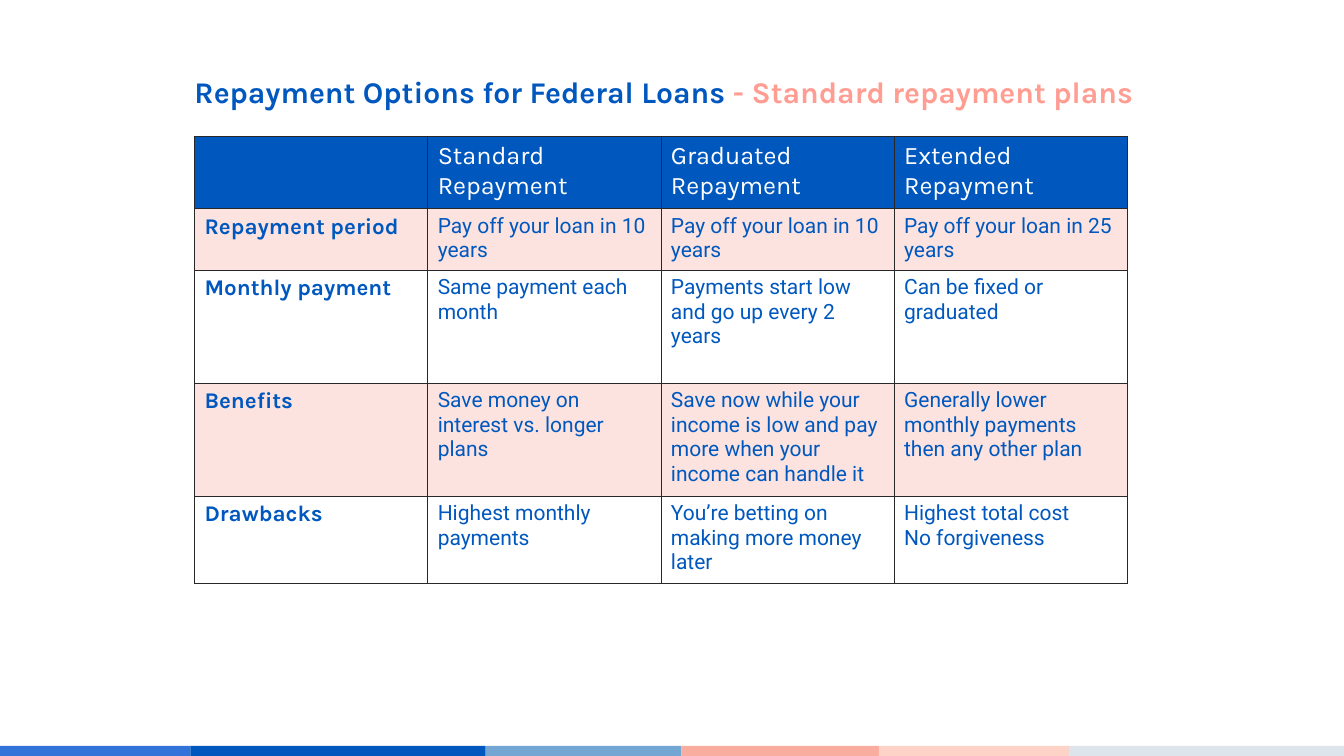
from lxml import etree
from pptx import Presentation
from pptx.dml.color import RGBColor
from pptx.enum.shapes import MSO_SHAPE
from pptx.enum.text import MSO_AUTO_SIZE
from pptx.oxml.ns import qn
from pptx.util import Inches, Pt

RECTANGLE = MSO_SHAPE.RECTANGLE
FIT_SHAPE = MSO_AUTO_SIZE.SHAPE_TO_FIT_TEXT

BLUE = RGBColor(0x00, 0x58, 0xBF)
BRIGHT_BLUE = RGBColor(0x31, 0x73, 0xD9)
SKY = RGBColor(0x74, 0xA6, 0xD3)
CORAL = RGBColor(0xF8, 0xAD, 0x9E)
PEACH = RGBColor(0xFD, 0xD3, 0xC7)
MIST = RGBColor(0xDD, 0xE4, 0xEC)
SALMON = RGBColor(0xFF, 0x9D, 0x93)
BLUSH = RGBColor(0xFC, 0xE3, 0xDF)
WHITE = RGBColor(0xFF, 0xFF, 0xFF)
BORDER = RGBColor(0x28, 0x28, 0x28)


def add_run(paragraph, text, size, font_name, color, bold=False):
    run = paragraph.add_run()
    run.text = text
    run.font.size = Pt(size)
    run.font.name = font_name
    run.font.color.rgb = color
    run.font.bold = bold


def add_borders(cell):
    properties = cell._tc.get_or_add_tcPr()
    for side in ("a:lnL", "a:lnR", "a:lnT", "a:lnB"):
        line = etree.SubElement(properties, qn(side), w=str(Pt(1)))
        fill = etree.SubElement(line, qn("a:solidFill"))
        etree.SubElement(fill, qn("a:srgbClr"), val=str(BORDER))


presentation = Presentation()
presentation.slide_width = Inches(26.67)
presentation.slide_height = Inches(15)
slide = presentation.slides.add_slide(presentation.slide_layouts[6])

stripe_edges = [0, 3.78, 9.64, 13.52, 17.44, 21.21, 26.67]
stripe_colors = [BRIGHT_BLUE, BLUE, SKY, CORAL, PEACH, MIST]
for left, right, color in zip(stripe_edges, stripe_edges[1:], stripe_colors):
    stripe = slide.shapes.add_shape(
        RECTANGLE, Inches(left), Inches(14.8), Inches(right - left), Inches(0.2))
    stripe.shadow.inherit = False
    stripe.fill.solid()
    stripe.fill.fore_color.rgb = color
    stripe.line.fill.background()

plans = [
    ["", "Standard Repayment", "Graduated Repayment", "Extended Repayment"],
    ["Repayment period", "Pay off your loan in 10 years",
     "Pay off your loan in 10 years", "Pay off your loan in 25 years"],
    ["Monthly payment", "Same payment each month",
     "Payments start low and go up every 2 years", "Can be fixed or graduated"],
    ["Benefits", "Save money on interest vs. longer plans",
     "Save now while your income is low and pay more when your income can handle it",
     "Generally lower monthly payments then any other plan"],
    ["Drawbacks", "Highest monthly payments",
     "You’re betting on making more money later",
     "Highest total cost\nNo forgiveness"],
]
row_heights = [1.43, 1.22, 2.24, 2.24, 1.73]
table = slide.shapes.add_table(
    len(plans), len(plans[0]), Inches(3.86), Inches(2.71),
    Inches(18.51), Inches(sum(row_heights))).table
table.horz_banding = False
for column in table.columns:
    column.width = Inches(18.51 / len(plans[0]))

for row_index, texts in enumerate(plans):
    table.rows[row_index].height = Inches(row_heights[row_index])
    for column_index, text in enumerate(texts):
        cell = table.cell(row_index, column_index)
        cell.margin_left = cell.margin_right = Inches(0.2)
        cell.margin_top = cell.margin_bottom = Inches(0.1)
        add_borders(cell)
        if row_index % 2 == 0 and row_index > 0:
            cell.fill.background()
        else:
            cell.fill.solid()
            cell.fill.fore_color.rgb = BLUSH if row_index else BLUE

        if row_index == 0:
            style = (36, "Karla", WHITE)
        elif column_index == 0:
            style = (32, "Karla", BLUE, True)
        else:
            style = (30, "Roboto", BLUE)
        if text:
            for line_index, line in enumerate(text.split("\n")):
                frame = cell.text_frame
                paragraph = frame.add_paragraph() if line_index else frame.paragraphs[0]
                add_run(paragraph, line, *style)

title = slide.shapes.add_textbox(Inches(3.86), Inches(1.46), Inches(19.23), Inches(0.72))
frame = title.text_frame
frame.margin_left = frame.margin_right = frame.margin_top = frame.margin_bottom = 0
frame.word_wrap = False
frame.auto_size = FIT_SHAPE
add_run(frame.paragraphs[0], "Repayment Options for Federal Loans ", 42.9, "Karla", BLUE, True)
add_run(frame.paragraphs[0], "- Standard repayment plans", 42.9, "Karla", SALMON, True)

presentation.save("out.pptx")
